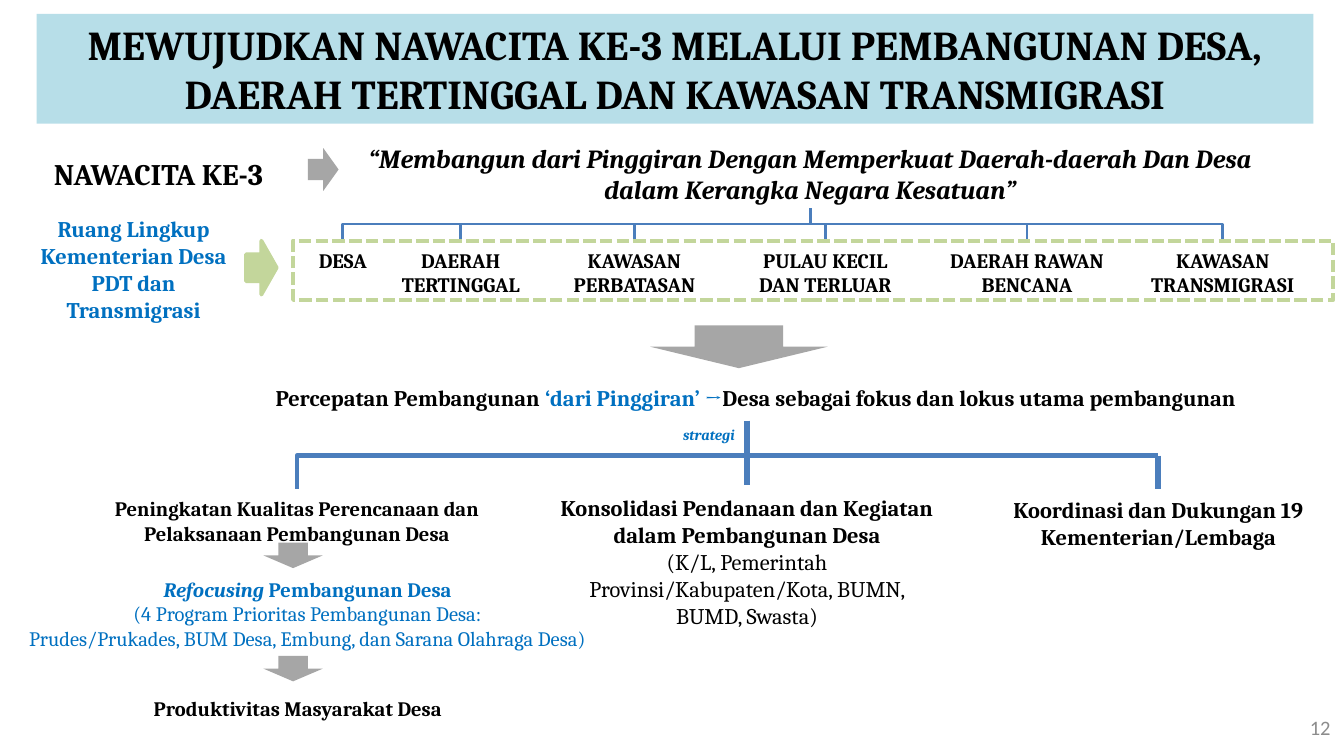
from pptx import Presentation
from pptx.dml.color import RGBColor
from pptx.enum.dml import MSO_LINE
from pptx.enum.shapes import MSO_CONNECTOR, MSO_SHAPE
from pptx.enum.text import MSO_ANCHOR, MSO_AUTO_SIZE, PP_ALIGN
from pptx.oxml.ns import qn
from pptx.util import Cm, Pt
from lxml import etree

RECT, RIGHT, DOWN = MSO_SHAPE.RECTANGLE, MSO_SHAPE.RIGHT_ARROW, MSO_SHAPE.DOWN_ARROW
STRAIGHT, ELBOW = MSO_CONNECTOR.STRAIGHT, MSO_CONNECTOR.ELBOW
LEFT, CENTER, ALIGN_RIGHT = PP_ALIGN.LEFT, PP_ALIGN.CENTER, PP_ALIGN.RIGHT
TOP, MIDDLE = MSO_ANCHOR.TOP, MSO_ANCHOR.MIDDLE
BLACK, BLUE, GREY, GREEN, LINE = "000000", "0070C0", "A6A6A6", "C3D69B", "4B7EBC"
WIDE, NORMAL, NARROW = (0.33, 0.15), (0.25, 0.13), (0.2, 0.1)


def rgb(value):
    return RGBColor.from_string(value)


class Board:
    font = "Cambria"

    def __init__(self, slide):
        self.s = slide

    def fill_frame(self, tf, lines, size, color=BLACK, bold=True, italic=False,
                   align=CENTER, inset=NORMAL, wrap=True, anchor=TOP, font=None):
        """Fill a frame; a line is a string or a list of (text, changes) runs."""
        tf.word_wrap = wrap
        tf.auto_size = MSO_AUTO_SIZE.NONE
        tf.vertical_anchor = anchor
        tf.margin_left = tf.margin_right = Cm(inset[0])
        tf.margin_top = tf.margin_bottom = Cm(inset[1])
        base = dict(color=color, bold=bold, italic=italic)
        for i, line in enumerate(lines):
            p = tf.paragraphs[0] if i == 0 else tf.add_paragraph()
            p.alignment = align
            for text, changes in [(line, {})] if isinstance(line, str) else line:
                look = base | changes
                r = p.add_run()
                r.text = text
                r.font.name = font or self.font
                r.font.size = Pt(size)
                r.font.bold, r.font.italic = look["bold"], look["italic"]
                r.font.color.rgb = rgb(look["color"])

    def title(self, x, y, w, h, lines, size, fill):
        sp = self.s.shapes.title
        sp.left, sp.top, sp.width, sp.height = Cm(x), Cm(y), Cm(w), Cm(h)
        sp.fill.solid()
        sp.fill.fore_color.rgb = rgb(fill)
        self.fill_frame(sp.text_frame, lines, size, inset=NARROW)

    def text(self, x, y, w, h, lines, size, **style):
        sp = self.s.shapes.add_textbox(Cm(x), Cm(y), Cm(w), Cm(h))
        self.fill_frame(sp.text_frame, lines, size, **style)

    def shape(self, kind, x, y, w, h, fill=None, line=None, width=2, dash=None):
        sp = self.s.shapes.add_shape(kind, Cm(x), Cm(y), Cm(w), Cm(h))
        sp.shadow.inherit = False
        if fill:
            sp.fill.solid()
            sp.fill.fore_color.rgb = rgb(fill)
        else:
            sp.fill.background()
        if line:
            sp.line.color.rgb = rgb(line)
            sp.line.width = Pt(width)
            sp.line.dash_style = dash
        else:
            sp.line.fill.background()

    def line(self, x1, y1, x2, y2, width, kind=STRAIGHT):
        c = self.s.shapes.add_connector(kind, Cm(x1), Cm(y1), Cm(x2), Cm(y2))
        c.line.color.rgb = rgb(LINE)
        c.line.width = Pt(width)
        spPr = c._element.spPr
        etree.SubElement(spPr, qn("a:effectLst"))
        return spPr

    def branch(self, x1, y1, x2, y2, width):
        """Elbow that leaves downwards: a horizontal elbow turned a quarter."""
        cx, cy = (x1 + x2) / 2, (y1 + y2) / 2
        half_w, half_h = (y2 - y1) / 2, abs(x2 - x1) / 2
        turn = 90
        if x2 > x1:
            half_w, turn = -half_w, 270
        spPr = self.line(cx - half_w, cy - half_h, cx + half_w, cy + half_h, width, ELBOW)
        spPr.find(qn("a:xfrm")).set("rot", str(turn * 60000))

    def corner(self, x1, y1, x2, y2, width):
        """Elbow with one bend: across, then down."""
        spPr = self.line(x1, y1, x2, y2, width, ELBOW)
        spPr.find(qn("a:prstGeom")).set("prst", "bentConnector2")


def main():
    prs = Presentation()
    prs.slide_width, prs.slide_height = Cm(25.4), Cm(14.29)
    b = Board(prs.slides.add_slide(prs.slide_layouts[5]))

    b.title(0.69, 0.26, 24.13, 2.08,
            ["MEWUJUDKAN NAWACITA KE-3 MELALUI PEMBANGUNAN DESA,",
             "DAERAH TERTINGGAL DAN KAWASAN TRANSMIGRASI"], 22, "B7DEE8")

    # Goal
    b.text(0.69, 2.8, 4.8, 0.93, ["NAWACITA KE-3"], 16, align=LEFT, inset=WIDE, wrap=False)
    b.shape(RIGHT, 5.82, 2.8, 0.58, 0.81, GREY)
    b.text(6.17, 2.54, 18.29, 1.4,
           ["“Membangun dari Pinggiran Dengan Memperkuat Daerah-daerah Dan Desa "
            "dalam Kerangka Negara Kesatuan”"], 14, italic=True, inset=WIDE)

    # Scope: centre, width, wrap, lines
    areas = [
        (6.48, 1.63, False, ["DESA"]),
        (8.71, 3.02, False, ["DAERAH", "TERTINGGAL"]),
        (11.99, 3.12, False, ["KAWASAN", "PERBATASAN"]),
        (15.6, 3.28, False, ["PULAU KECIL", "DAN TERLUAR"]),
        (19.41, 4.39, True, ["DAERAH RAWAN BENCANA"]),
        (23.11, 3.45, False, ["KAWASAN", "TRANSMIGRASI"]),
    ]
    for cx, w, wrap, lines in areas:
        b.text(cx - w / 2, 4.53, w, 1.17, lines, 11, inset=WIDE, wrap=wrap)
        b.branch(15.32, 3.94, cx, 4.53, 1.5)
    b.shape(RECT, 5.54, 4.55, 19.66, 1.12, line=GREEN, width=2.25, dash=MSO_LINE.SQUARE_DOT)
    b.text(0.25, 3.94, 4.55, 2.31,
           ["Ruang Lingkup Kementerian Desa PDT dan Transmigrasi"], 12, color=BLUE)
    b.shape(RIGHT, 4.65, 4.55, 0.58, 1.02, GREEN, GREEN)

    # Focus
    b.shape(DOWN, 12.29, 6.15, 3.35, 0.81, GREY)
    b.text(3.45, 7.11, 21.67, 0.84,
           [[("Percepatan Pembangunan ", {}), ("‘dari Pinggiran’ →", {"color": BLUE}),
             ("Desa sebagai fokus dan lokus utama pembangunan", {})]], 12, inset=WIDE)

    # Strategies
    b.text(12.7, 7.95, 1.4, 0.53, ["strategi"], 8, color=BLUE, italic=True,
           inset=NARROW, wrap=False)
    b.corner(21.89, 8.61, 5.61, 9.25, 2.25)
    b.line(21.89, 8.61, 21.89, 9.25, 3)
    b.line(14.12, 7.95, 14.12, 9.17, 3)
    b.text(0.99, 9.25, 9.25, 1.19,
           ["Peningkatan Kualitas Perencanaan dan Pelaksanaan Pembangunan Desa"], 11)
    b.text(10.26, 9.22, 7.72, 2.82,
           ["Konsolidasi Pendanaan dan Kegiatan dalam Pembangunan Desa",
            [("(K/L, Pemerintah Provinsi/Kabupaten/Kota, BUMN, BUMD, Swasta)",
              {"bold": False})]], 12)
    b.text(18.9, 9.25, 5.99, 1.27, ["Koordinasi dan Dukungan 19 Kementerian/Lembaga"], 12)

    # Village results
    for y in (10.26, 12.4):
        b.shape(DOWN, 4.98, y, 1.12, 0.48, GREY)
    plain = {"bold": False}
    b.text(0, 10.77, 11.63, 1.65,
           [[("Refocusing ", {"italic": True}), ("Pembangunan Desa", {})],
            [("(4 Program Prioritas Pembangunan Desa:", plain)],
            [("Prudes/Prukades, BUM Desa, Embung, dan Sarana Olahraga Desa)", plain)]],
           11, color=BLUE)
    b.text(1.02, 13.03, 9.22, 0.71, ["Produktivitas Masyarakat Desa"], 11)

    b.text(19.48, 13.36, 5.92, 0.76, ["12"], 11, color="8C8C8C", bold=False,
           align=ALIGN_RIGHT, anchor=MIDDLE, font="Calibri")

    prs.save("out.pptx")


if __name__ == "__main__":
    main()
